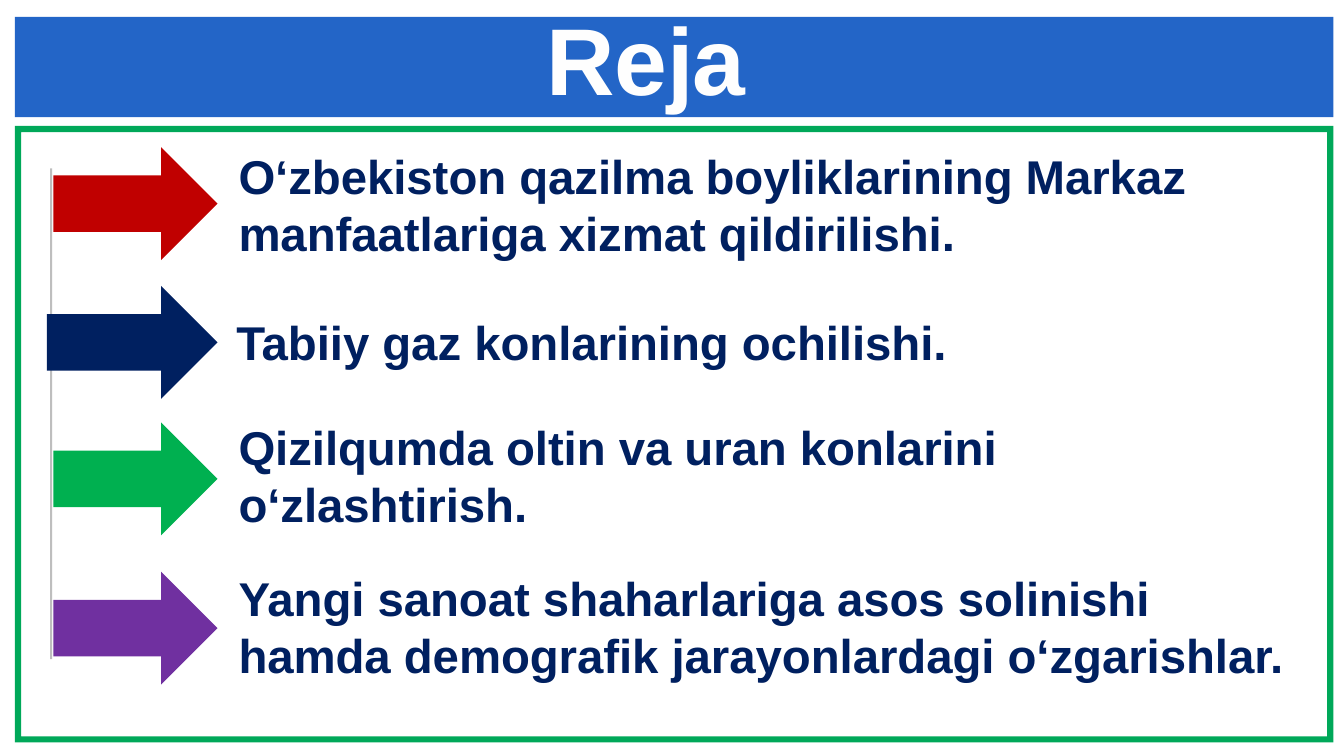
from dataclasses import dataclass

from lxml.etree import SubElement
from pptx import Presentation
from pptx.dml.color import RGBColor as Rgb
from pptx.enum.shapes import MSO_CONNECTOR as Link, MSO_SHAPE as Form
from pptx.enum.text import MSO_ANCHOR as Anchor, MSO_AUTO_SIZE as Fit, PP_ALIGN as Align
from pptx.oxml.ns import qn
from pptx.util import Inches, Pt


@dataclass(frozen=True)
class Theme:
    font: str = "Arial"
    head: int = 32
    body: int = 16
    white: str = "FEFEFE"
    blue: str = "2365C7"
    edge: str = "00A859"
    gray: str = "7F7F7F"
    red: str = "C00000"
    navy: str = "002060"
    green: str = "00B050"
    plum: str = "7030A0"


# Slide in 16:9
theme = Theme()
wide = 6.3
deck = Presentation()
deck.slide_width, deck.slide_height = Inches(wide), Inches(wide * 9 / 16)
slide = deck.slides.add_slide(deck.slide_layouts[5])
shapes = slide.shapes


def add_form(form, box, color):
    shape = shapes.add_shape(form, *map(Inches, box))
    shape.shadow.inherit = False
    shape.fill.solid()
    shape.fill.fore_color.rgb = Rgb.from_string(color)
    shape.line.fill.background()
    return shape


def add_run(para, text, size, color):
    run = para.add_run()
    run.text = text
    font = run.font
    font.name, font.size, font.bold = theme.font, Pt(size), True
    font.color.rgb = Rgb.from_string(color)


# Green frame and blue banner, both behind the title
title = shapes.title
frame = add_form(Form.FRAME, (0.07, 0.59, 6.18, 2.89), theme.edge)
frame.adjustments[0] = 0.01
banner = add_form(Form.RECTANGLE, (0.07, 0.08, 6.18, 0.47), theme.blue)
for back in (frame, banner):
    title.element.addprevious(back.element)

# Title
title.left, title.top = Inches(0.65), Inches(-0.02)
title.width, title.height = Inches(4.75), Inches(0.56)
text = title.text_frame
text.margin_left = text.margin_right = text.margin_bottom = 0
text.margin_top = Inches(0.02)
text.vertical_anchor = Anchor.MIDDLE
text.word_wrap = True
text.auto_size = Fit.SHAPE_TO_FIT_TEXT
para = text.paragraphs[0]
para.alignment = Align.CENTER
para.space_before = Pt(1.3)
add_run(para, "Reja", theme.head, theme.white)

# Title indent and letter spacing
next(title.element.iter(qn("a:pPr"))).set("marL", str(Inches(0.01)))
next(title.element.iter(qn("a:rPr"))).set("spc", "-20")

# Thin line behind the arrows
rail = shapes.add_connector(Link.STRAIGHT, Inches(0.24), Inches(0.79), Inches(0.24), Inches(3.09))
rail.line.width = Pt(0.75)
rail.line.color.rgb = Rgb.from_string(theme.gray)
tint = next(rail.element.iter(qn("a:srgbClr")))
SubElement(tint, qn("a:alpha")).set("val", "50000")
SubElement(rail.element.spPr, qn("a:effectLst"))

# Plan: arrow left, arrow top, color, text left, text top, text height, words
right = 1.02
plan = [
    (0.25, 0.69, theme.red, 1.02, 0.64, 0.64,
     "O‘zbekiston qazilma boyliklarining Markaz manfaatlariga xizmat qildirilishi."),
    (0.22, 1.34, theme.navy, 1.01, 1.42, 0.37,
     "Tabiiy gaz konlarining ochilishi."),
    (0.25, 1.98, theme.green, 1.02, 1.91, 0.64,
     "Qizilqumda oltin va uran konlarini o‘zlashtirish."),
    (0.25, 2.68, theme.plum, 1.02, 2.62, 0.64,
     "Yangi sanoat shaharlariga asos solinishi hamda demografik jarayonlardagi o‘zgarishlar."),
]
for left, top, color, start, head, high, words in plan:
    add_form(Form.RIGHT_ARROW, (left, top, right - left, 0.53), color)
    box = shapes.add_textbox(*map(Inches, (start, head, 5.13, high)))
    text = box.text_frame
    text.word_wrap = True
    text.auto_size = Fit.SHAPE_TO_FIT_TEXT
    add_run(text.paragraphs[0], words, theme.body, theme.navy)

deck.save("out.pptx")
